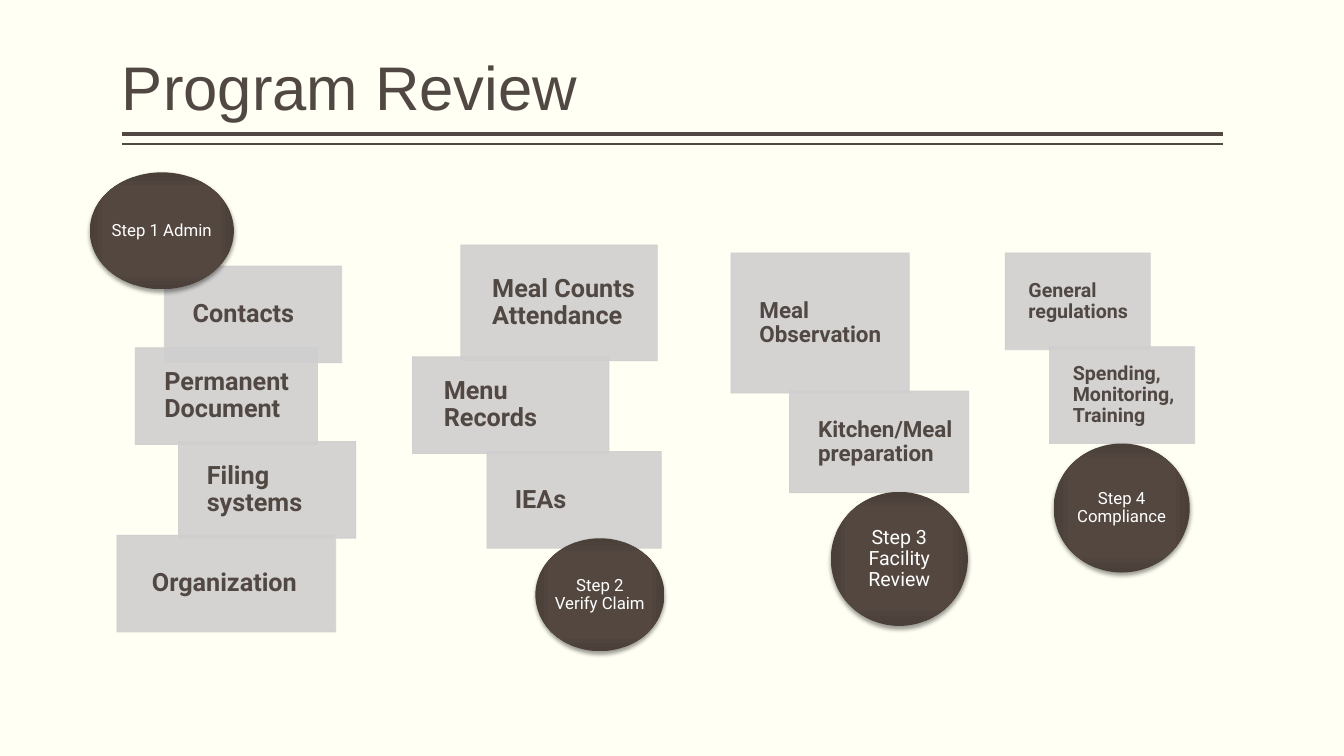
from lxml import etree
from pptx import Presentation
from pptx import util as u
from pptx.dml.color import RGBColor
from pptx.enum import shapes, text
from pptx.oxml import parse_xml
from pptx.oxml.ns import nsdecls, qn

COLUMNS, ROWS = 1333, 750
CELL = u.Inches(0.01)
COLORS = {"paper": "FFFFF3", "ink": "514843", "box": "D0CFCF", "step_text": "FFFFFF",
          "step_core": "544740", "step_mid": "534740", "step_rim": "4A3F39",
          "shadow": "000000"}
TITLE_LEFT, TITLE_WIDTH = 121, 1092
RULES = [(133, 3), (143, 1)]
TOPIC_INDENT = 0.16
TOPIC_PADDING = 0.8

STEPS = [
    {"topic_size": 18,
     "topics": [("Contacts", 163, 264, 176, 96),
                ("Permanent Document", 134, 345, 181, 96),
                ("Filing systems", 177, 438, 176, 96),
                ("Organization", 116, 531, 217, 96)],
     "step": ("Step 1 Admin", 89, 171, 143, 116), "step_size": 12},
    {"topic_size": 18,
     "topics": [("Meal Counts Attendance", 457, 243, 195, 115),
                ("Menu Records", 409, 354, 195, 96),
                ("IEAs", 483, 448, 173, 96)],
     "step": ("Step 2 Verify Claim", 531, 534, 128, 112), "step_size": 12},
    {"topic_size": 16,
     "topics": [("Meal Observation", 725, 251, 177, 139),
                ("Kitchen/Meal preparation", 783, 388, 178, 101)],
     "step": ("Step 3 Facility Review", 824, 488, 136, 133), "step_size": 14},
    {"topic_size": 14,
     "topics": [("General regulations", 997, 251, 144, 96),
                ("Spending, Monitoring, Training", 1041, 344, 144, 96)],
     "step": ("Step 4 Compliance", 1045, 440, 135, 128), "step_size": 12},
]


def cells(*counts):
    """Convert grid cells to slide lengths."""
    return [round(count * CELL) for count in counts]


def rgb(name):
    """Look up a palette colour."""
    return RGBColor.from_string(COLORS[name])


def write(holder, wording, size, color, font="Roboto", bold=False,
          align=text.PP_ALIGN.LEFT, anchor=text.MSO_ANCHOR.MIDDLE, insets=(0, 0, 0, 0)):
    """Set one paragraph of wrapped text in a shape."""
    frame = holder.text_frame
    frame.word_wrap = True
    frame.vertical_anchor = anchor
    (frame.margin_left, frame.margin_top,
     frame.margin_right, frame.margin_bottom) = cells(*insets)
    paragraph = frame.paragraphs[0]
    paragraph.text = wording
    paragraph.alignment = align
    paragraph.line_spacing = 0.9
    paragraph.font.name = font
    paragraph.font.size = u.Pt(size)
    paragraph.font.bold = bold
    paragraph.font.color.rgb = rgb(color)


def add_title(slide, wording):
    """Add the heading and the double rule below it."""
    heading = slide.shapes.add_textbox(*cells(TITLE_LEFT, 8, TITLE_WIDTH, 120))
    write(heading, wording, 44, "ink", font="Arial",
          anchor=text.MSO_ANCHOR.BOTTOM, insets=(0, 5, 0, 5))
    for row, weight in RULES:
        rule = slide.shapes.add_connector(
            shapes.MSO_CONNECTOR.STRAIGHT,
            *cells(TITLE_LEFT, row, TITLE_LEFT + TITLE_WIDTH, row))
        rule.line.color.rgb = rgb("ink")
        rule.line.width = u.Pt(weight)
        etree.SubElement(rule._element.spPr, qn("a:effectLst"))


def add_topic(slide, size, wording, left, top, width, height):
    """Add a translucent box holding one review topic."""
    topic = slide.shapes.add_shape(shapes.MSO_SHAPE.RECTANGLE,
                                   *cells(left, top, width, height))
    topic.shadow.inherit = False
    topic.fill.solid()
    topic.fill.fore_color.rgb = rgb("box")
    topic.line.color.rgb = rgb("box")
    topic.line.width = u.Pt(0.5)
    for tint in topic._element.spPr.iter(qn("a:srgbClr")):
        etree.SubElement(tint, qn("a:alpha"), val="90000")
    padding = size * TOPIC_PADDING
    write(topic, wording, size, "ink", bold=True,
          insets=(width * TOPIC_INDENT, padding, padding, padding))


def add_step(slide, size, wording, *place):
    """Add a shaded, shadowed circle naming a step."""
    step = slide.shapes.add_shape(shapes.MSO_SHAPE.OVAL, *cells(*place))
    step.line.fill.background()
    step.shadow.inherit = False
    stops = "".join(
        f'<a:gs pos="{share * 1000}"><a:srgbClr val="{COLORS[name]}"/></a:gs>'
        for share, name in [(0, "step_core"), (71, "step_mid"), (100, "step_rim")])
    properties = step._element.spPr
    properties.insert(2, parse_xml(
        f'<a:gradFill {nsdecls("a")} rotWithShape="1"><a:gsLst>{stops}</a:gsLst>'
        '<a:path path="rect"><a:fillToRect l="50000" t="50000" r="50000" b="50000"/>'
        '</a:path></a:gradFill>'))
    properties.find(qn("a:effectLst")).append(parse_xml(
        f'<a:outerShdw {nsdecls("a")} blurRad="{u.Pt(3.1)}" dist="{u.Pt(2)}" '
        f'dir="5400000" rotWithShape="0"><a:srgbClr val="{COLORS["shadow"]}">'
        '<a:alpha val="38000"/></a:srgbClr></a:outerShdw>'))
    write(step, wording, size, "step_text", align=text.PP_ALIGN.CENTER)


def main():
    """Build the program review slide."""
    deck = Presentation()
    deck.slide_width, deck.slide_height = cells(COLUMNS, ROWS)
    slide = deck.slides.add_slide(deck.slide_layouts[6])
    slide.background.fill.solid()
    slide.background.fill.fore_color.rgb = rgb("paper")
    add_title(slide, "Program Review")
    for stage in STEPS:
        for topic in stage["topics"]:
            add_topic(slide, stage["topic_size"], *topic)
        add_step(slide, stage["step_size"], *stage["step"])
    deck.save("out.pptx")


if __name__ == "__main__":
    main()
